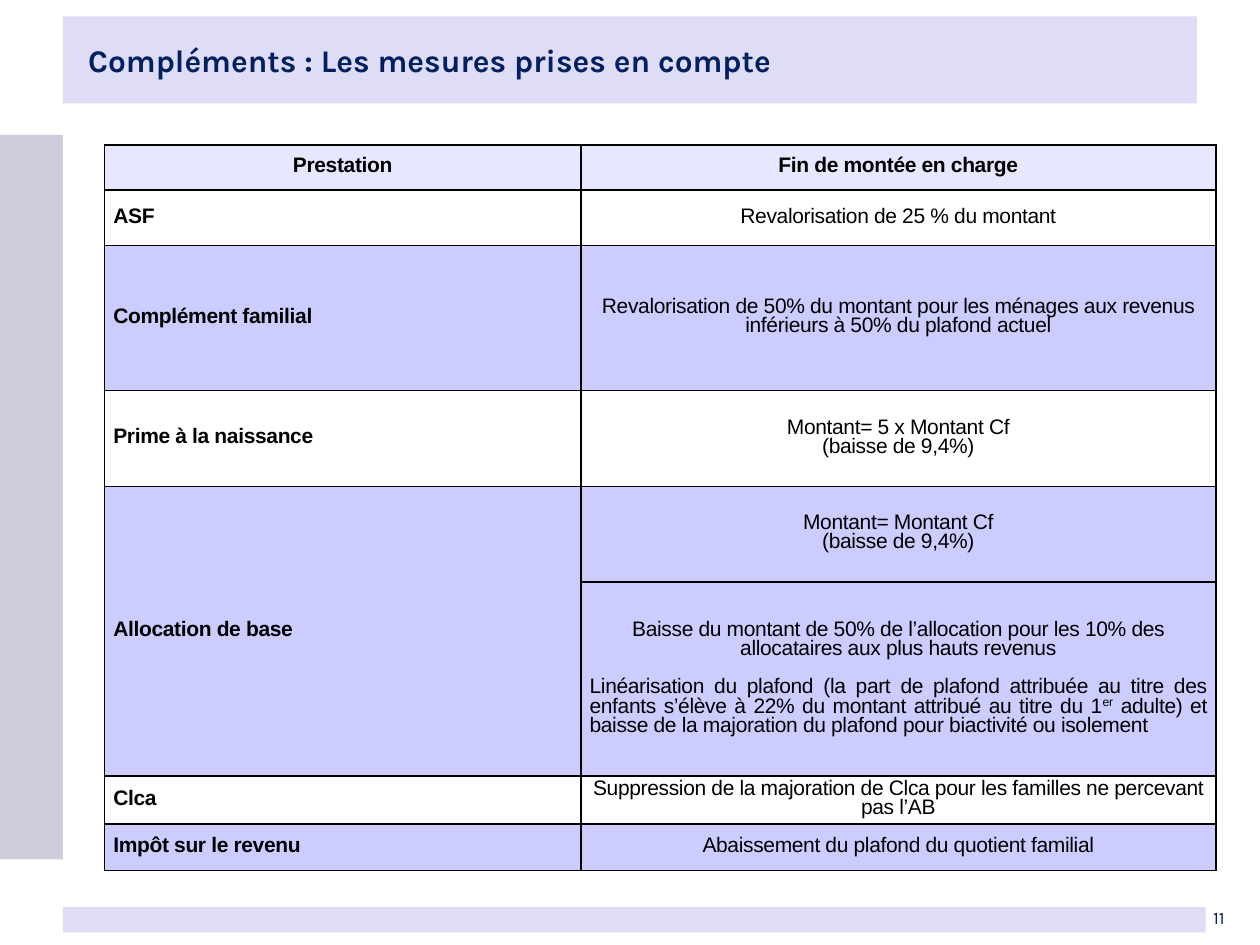
"""Build the slide listing the benefit measures taken into account."""
from lxml.etree import SubElement
from pptx import Presentation
from pptx.dml.color import RGBColor
from pptx.enum.shapes import MSO_SHAPE as Shape
from pptx.enum.text import MSO_ANCHOR as Anchor, PP_ALIGN as Align
from pptx.oxml import parse_xml
from pptx.oxml.ns import nsdecls, qn
from pptx.util import Inches, Pt

THEME = {
    "band": RGBColor.from_string("CAC4EE"),
    "side": RGBColor.from_string("CDCDDE"),
    "navy": RGBColor.from_string("002060"),
    "black": RGBColor.from_string("000000"),
    "header": RGBColor.from_string("E7E7FF"),
    "white": RGBColor.from_string("FFFFFF"),
    "lilac": RGBColor.from_string("CCCCFF"),
    "title_font": "Karla", "table_font": "Arial",
    "title_size": Pt(18), "table_size": Pt(12), "number_size": Pt(10),
    "line_height": Pt(11), "border": Pt(1),
}
COLUMNS, ROWS = 100, 75

presentation = Presentation()
presentation.slide_width, presentation.slide_height = Inches(10), Inches(7.5)
column = presentation.slide_width / COLUMNS
row = presentation.slide_height / ROWS
slide = presentation.slides.add_slide(presentation.slide_layouts[6])


def place(left, top, width, height):
    return [round(left * column), round(top * row), round(width * column), round(height * row)]


def assign(target, values):
    for name, value in values.items():
        setattr(target, name, value)


bars = {
    "footer": ((5, 72, 90.7, 2), "band", 59),
    "side": ((0, 10.7, 5, 57.5), "side", 100),
    "title": ((5, 1.3, 90, 6.9), "band", 59),
}
shapes = {}
for name, (area, color, opacity) in bars.items():
    shape = slide.shapes.add_shape(Shape.RECTANGLE, *place(*area))
    shape.shadow.inherit = False
    shape.line.fill.background()
    shape.fill.solid()
    shape.fill.fore_color.rgb = THEME[color]
    if opacity < 100:
        color_element = shape.fill._xPr.find(qn("a:solidFill"))[0]
        SubElement(color_element, qn("a:alpha")).set("val", str(opacity * 1000))
    shapes[name] = shape
shapes["number"] = slide.shapes.add_textbox(*place(95.3, 71.6, 4.7, 2.5))

labels = [
    ("title", "Compléments : Les mesures prises en compte", "title_size", True, 2, True),
    ("number", "11", "number_size", False, 1, False),
]
for name, text, size, bold, inset, wrap in labels:
    frame = shapes[name].text_frame
    assign(frame, {"word_wrap": wrap, "vertical_anchor": Anchor.MIDDLE,
                   "margin_left": round(inset * column), "margin_right": round(inset * column)})
    paragraph = frame.paragraphs[0]
    paragraph.alignment = Align.LEFT
    run = paragraph.add_run()
    run.text = text
    assign(run.font, {"name": THEME["title_font"], "size": THEME[size], "bold": bold})
    run.font.color.rgb = THEME["navy"]

measures = [
    (3.6, "header", "Prestation", [(Align.CENTER, "Fin de montée en charge")]),
    (4.4, "white", "ASF", [(Align.CENTER, "Revalorisation de 25 % du montant")]),
    (11.5, "lilac", "Complément familial", [
        (Align.CENTER, "Revalorisation de 50% du montant pour les ménages aux revenus "
                       "inférieurs à 50% du plafond actuel")]),
    (7.6, "white", "Prime à la naissance", [
        (Align.CENTER, "Montant= 5 x Montant Cf"), (Align.CENTER, "(baisse de 9,4%)")]),
    (7.6, "lilac", "Allocation de base", [
        (Align.CENTER, "Montant= Montant Cf"), (Align.CENTER, "(baisse de 9,4%)")]),
    (15.4, "lilac", "", [
        (Align.CENTER, "Baisse du montant de 50% de l’allocation pour les 10% des "
                       "allocataires aux plus hauts revenus"),
        (Align.JUSTIFY, "Linéarisation du plafond (la part de plafond attribuée au titre des "
                        "enfants s’élève à 22% du montant attribué au titre du 1^er^ adulte) et "
                        "baisse de la majoration du plafond pour biactivité ou isolement")]),
    (3.8, "white", "Clca", [
        (Align.CENTER, "Suppression de la majoration de Clca pour les familles "
                       "ne percevant pas l’AB")]),
    (3.7, "lilac", "Impôt sur le revenu", [
        (Align.CENTER, "Abaissement du plafond du quotient familial")]),
]
widths = [37.8, 50.4]
table_height = sum(measure[0] for measure in measures)
table = slide.shapes.add_table(
    len(measures), len(widths), *place(8.3, 11.5, sum(widths), table_height)).table
for table_column, width in zip(table.columns, widths):
    table_column.width = round(width * column)

cell_format = {"vertical_anchor": Anchor.MIDDLE, "margin_top": 0, "margin_bottom": 0,
               "margin_left": round(0.7 * column), "margin_right": round(0.7 * column)}
for row_index, (height, fill, label, details) in enumerate(measures):
    table.rows[row_index].height = round(height * row)
    label_align = Align.LEFT if row_index else Align.CENTER
    for column_index, paragraphs in enumerate([[(label_align, label)], details]):
        cell = table.cell(row_index, column_index)
        assign(cell, cell_format)
        cell.fill.solid()
        cell.fill.fore_color.rgb = THEME[fill]
        for position, side in enumerate(("lnL", "lnR", "lnT", "lnB")):
            border = parse_xml(
                f'<a:{side} {nsdecls("a")} w="{THEME["border"]}"><a:solidFill>'
                f'<a:srgbClr val="{THEME["black"]}"/></a:solidFill></a:{side}>')
            cell._tc.get_or_add_tcPr().insert(position, border)
        for index, (alignment, text) in enumerate(paragraphs):
            frame = cell.text_frame
            paragraph = frame.add_paragraph() if index else frame.paragraphs[0]
            justified = alignment == Align.JUSTIFY
            assign(paragraph, {"alignment": alignment, "line_spacing": THEME["line_height"],
                               "space_before": THEME["line_height"] if justified else 0})
            for part, words in enumerate(text.split("^")):
                if not words:
                    continue
                run = paragraph.add_run()
                run.text = words
                assign(run.font, {"name": THEME["table_font"], "size": THEME["table_size"],
                                  "bold": row_index == 0 or column_index == 0})
                run.font.color.rgb = THEME["black"]
                run.font._element.set("spc", "-20")
                if part % 2:
                    run.font._element.set("baseline", "30000")
table.cell(4, 0).merge(table.cell(5, 0))

presentation.save("out.pptx")
